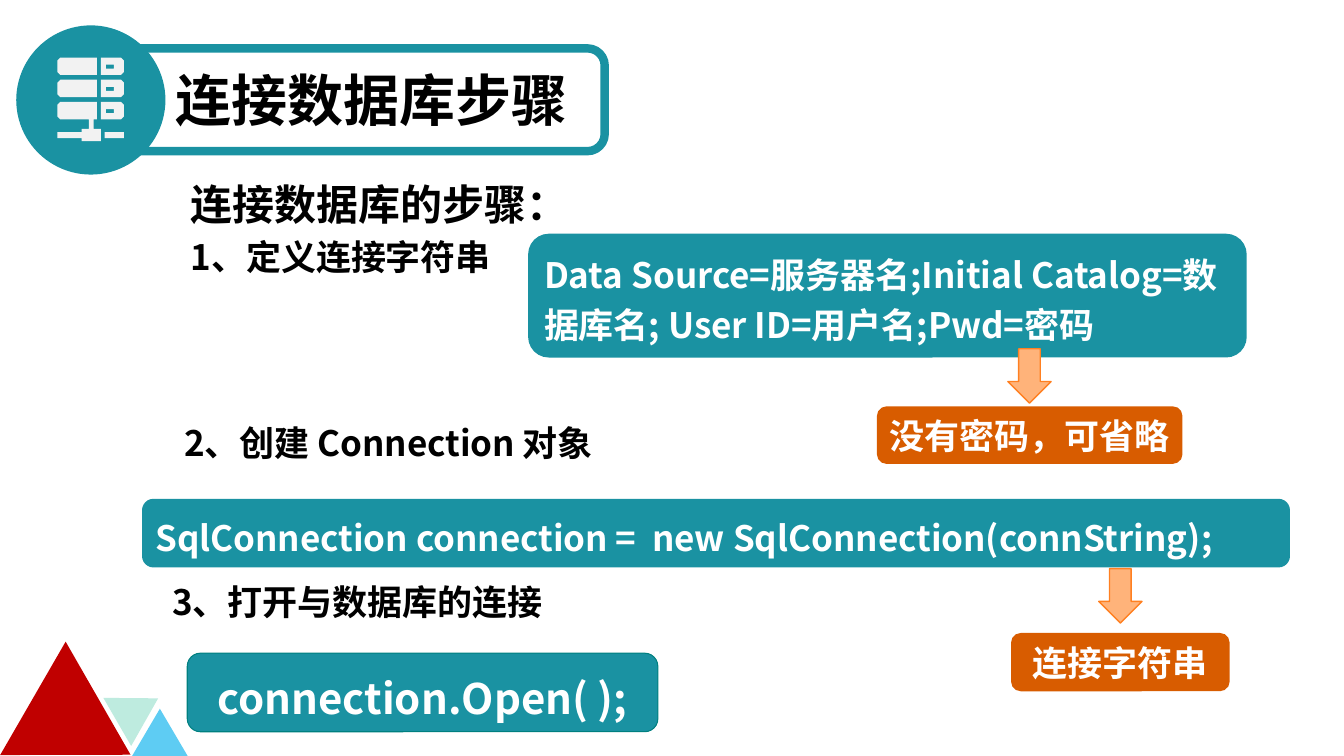
"""Build the slide on the steps for connecting to a database."""
from lxml.etree import SubElement
from pptx import Presentation
from pptx.dml.color import RGBColor
from pptx.enum.shapes import MSO_SHAPE
from pptx.enum.text import MSO_ANCHOR, MSO_AUTO_SIZE, PP_ALIGN
from pptx.oxml.ns import qn
from pptx.util import Cm, Pt

FACE = "Noto Sans CJK SC"
TEAL, RUST, WHITE, BLACK = "1A92A2", "D85C00", "FFFFFF", "000000"
hue = RGBColor.from_string

deck = Presentation()
deck.slide_width, deck.slide_height = Cm(33.87), Cm(19.05)
slide = deck.slides.add_slide(deck.slide_layouts[1])
shapes = slide.shapes


def form(kind, box, fill=None, line=None, width=1):
    shape = shapes.add_shape(kind, *map(Cm, box))
    shape.shadow.inherit = False
    if fill:
        shape.fill.solid()
        shape.fill.fore_color.rgb = hue(fill)
    else:
        shape.fill.background()
    if line:
        shape.line.color.rgb = hue(line)
        shape.line.width = Pt(width)
    else:
        shape.line.fill.background()
    return shape


def write(para, text, size, color, **style):
    for key, val in style.items():
        setattr(para, key, val)
    run = para.add_run()
    run.text = text
    for key, val in {"size": Pt(size), "bold": True, "name": FACE}.items():
        setattr(run.font, key, val)
    run.font.color.rgb = hue(color)
    SubElement(run.font._element, qn("a:ea"), typeface=FACE)


title, body = shapes.title, slide.placeholders[1]
for holder, box in ((title, (4.17, 1.52, 10.39, 1.96)), (body, (4.55, 4.37, 26.04, 3))):
    for key, val in zip(("left", "top", "width", "height"), box):
        setattr(holder, key, Cm(val))
    fit = {"vertical_anchor": MSO_ANCHOR.TOP, "auto_size": MSO_AUTO_SIZE.NONE,
           "word_wrap": holder is body}
    for key, val in fit.items():
        setattr(holder.text_frame, key, val)
write(title.text_frame.paragraphs[0], "连接数据库步骤", 40, BLACK, alignment=PP_ALIGN.LEFT)

frame = body.text_frame
for para, text, size, gap in (
    (frame.paragraphs[0], "连接数据库的步骤：", 30, 0),
    (frame.add_paragraph(), "1、定义连接字符串", 25, 5),
):
    props = para._p.get_or_add_pPr()
    props.set("marL", "0")
    props.set("indent", "0")
    SubElement(props, qn("a:buNone"))
    write(para, text, size, BLACK, space_before=Pt(gap))

for box, fill, turn in (
    ((3.33, 17.86, 1.4, 1.19), "5ECCF3", 0),
    ((2.77, 17.3, 1.4, 1.19), "BEEBDF", 60),
    ((0.41, 16.89, 3.3, 2.84), "C00000", 300),
):
    peak = form(MSO_SHAPE.ISOSCELES_TRIANGLE, box, fill)
    peak.rotation = turn
peak._element.spPr.xfrm.set("flipV", "1")

form(MSO_SHAPE.ROUNDED_RECTANGLE, (3.12, 1.22, 12.12, 2.59), None, TEAL, 6)
form(MSO_SHAPE.OVAL, (0.41, 0.64, 3.76, 3.76), TEAL)

rects = [(145, 333, 206, 348), (206, 325, 254, 356), (264, 333, 312, 348), (224, 301, 236, 325)]
loops = []
for top in (145, 201, 257):
    low = top + 44
    rects.append((267, top + 18, 287, top + 28))
    for flat, bend, edge in ((244, 152, 145), (254, 305, 312)):
        loops.append([(flat, top), (bend, top), (edge, top + 7),
                      (edge, low - 7), (bend, low), (flat, low)])
loops += [[(a, b), (c, b), (c, d), (a, d)] for a, b, c, d in rects]
pen = shapes.build_freeform(*loops[0][0], scale=Cm(0.01))
for loop in loops:
    pen.move_to(*loop[0])
    pen.add_line_segments(loop[1:], close=True)
server = pen.convert_to_shape()
server.shadow.inherit = False
server.fill.solid()
server.fill.fore_color.rgb = hue("F2F2F2")
server.line.fill.background()

for box, text in (
    ((3.12, 10.49, 26.04, 1.19), "2、创建 Connection 对象"),
    ((2.82, 14.5, 11.48, 1.19), "3、打开与数据库的连接"),
):
    frame = shapes.add_textbox(*map(Cm, box)).text_frame
    frame.word_wrap = True
    para = frame.paragraphs[0]
    props = para._p.get_or_add_pPr()
    props.set("marL", str(Cm(2.54)))
    props.set("indent", str(Cm(-1.27)))
    write(para, text, 25, BLACK)

LEFT, MID = PP_ALIGN.LEFT, PP_ALIGN.CENTER
for box, fill, line, text, size, align, pitch, wrap in (
    ((13.31, 5.89, 18.11, 3.12), TEAL, None,
     "Data Source=服务器名;Initial Catalog=数据库名; User ID=用户名;Pwd=密码", 25, LEFT, 1.2, True),
    ((3.58, 12.57, 28.93, 1.73), TEAL, None,
     "SqlConnection connection =  new SqlConnection(connString);", 25, LEFT, 1.2, True),
    ((4.72, 16.46, 11.86, 1.98), TEAL, "008080", "connection.Open( );", 30, MID, 1.2, True),
    ((22.1, 10.24, 7.7, 1.45), RUST, None, "没有密码，可省略", 25, LEFT, 1, False),
    ((25.48, 15.95, 5.51, 1.47), RUST, None, "连接字符串", 25, MID, 1, True),
):
    card = form(MSO_SHAPE.ROUNDED_RECTANGLE, box, fill, line, 0.75)
    frame = card.text_frame
    frame.word_wrap = wrap
    frame.vertical_anchor = MSO_ANCHOR.MIDDLE
    write(frame.paragraphs[0], text, size, WHITE, alignment=align, line_spacing=pitch)

for left, top in ((25.4, 8.79), (27.69, 14.33)):
    form(MSO_SHAPE.DOWN_ARROW, (left, top, 1.09, 1.37), "FFB37A", "FF8021")

deck.save("out.pptx")
